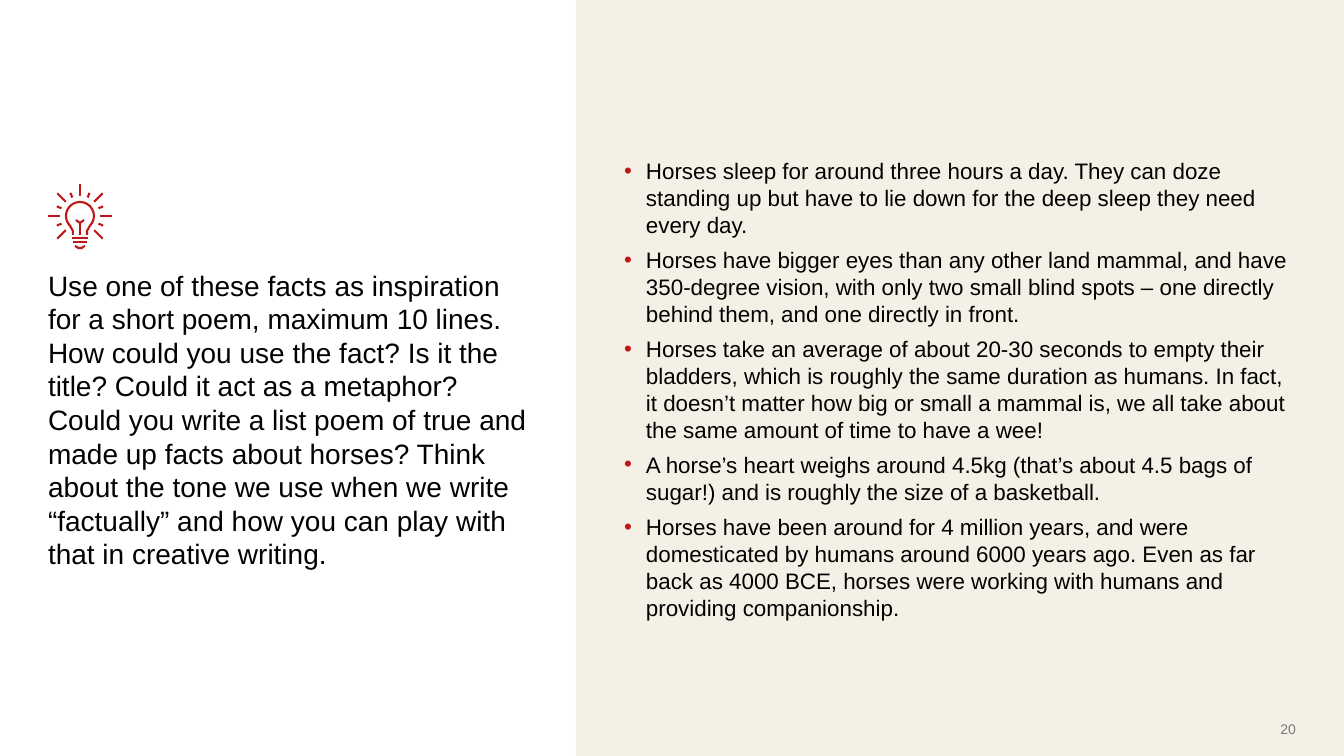
from math import cos, radians, sin

from lxml.etree import SubElement
from pptx import Presentation
from pptx.dml.color import RGBColor
from pptx.enum.shapes import MSO_CONNECTOR as Connector, MSO_SHAPE as Shape
from pptx.enum.text import MSO_ANCHOR as Anchor, MSO_AUTO_SIZE as AutoSize, PP_ALIGN as Align
from pptx.oxml.ns import qn
from pptx.util import Pt

PX = 12192000 / 1344
INK, RED, CREAM, GREY = "010302", "BF1716", "F4F0E5", "797979"

PROMPT = (
    "Use one of these facts as inspiration for a short poem, maximum 10 lines. "
    "How could you use the fact? Is it the title? Could it act as a metaphor? "
    "Could you write a list poem of true and made up facts about horses? "
    "Think about the tone we use when we write “factually” and how you can play "
    "with that in creative writing."
)
FACTS = [
    "Horses sleep for around three hours a day. They can doze standing up but have "
    "to lie down for the deep sleep they need every day.",
    "Horses have bigger eyes than any other land mammal, and have 350-degree vision, "
    "with only two small blind spots – one directly behind them, and one directly in front.",
    "Horses take an average of about 20-30 seconds to empty their bladders, which is "
    "roughly the same duration as humans. In fact, it doesn’t matter how big or small "
    "a mammal is, we all take about the same amount of time to have a wee!",
    "A horse’s heart weighs around 4.5kg (that’s about 4.5 bags of sugar!) and is "
    "roughly the size of a basketball.",
    "Horses have been around for 4 million years, and were domesticated by humans "
    "around 6000 years ago. Even as far back as 4000 BCE, horses were working with "
    "humans and providing companionship.",
]


def emu(px):
    return round(px * PX)


def rgb(value):
    return RGBColor.from_string(value)


def polar(centre, radius, degrees):
    angle = radians(degrees)
    return centre[0] + radius * cos(angle), centre[1] - radius * sin(angle)


class Page:
    """Holds the style and the current slide, and draws each kind of element."""

    def __init__(self, slide, font="Arial", stroke=1.5):
        self.slide, self.shapes = slide, slide.shapes
        self.font, self.stroke = font, Pt(stroke)

    def panel(self, x, y, width, height, fill):
        panel = self.shapes.add_shape(Shape.RECTANGLE, *map(emu, (x, y, width, height)))
        panel.shadow.inherit = False
        panel.fill.solid()
        panel.fill.fore_color.rgb = rgb(fill)
        panel.line.fill.background()
        self.shapes.element.insert(2, panel.element)

    def text(self, holder, box, lines, size, color=INK, align=Align.LEFT,
             anchor=Anchor.TOP, after=0, bullet=None):
        holder.left, holder.top, holder.width, holder.height = map(emu, box)
        frame = holder.text_frame
        frame.text = "\n".join(lines)
        frame.word_wrap, frame.auto_size = True, AutoSize.NONE
        frame.vertical_anchor = anchor
        frame.margin_left = frame.margin_right = frame.margin_top = frame.margin_bottom = 0
        for paragraph in frame.paragraphs:
            paragraph.alignment = align
            paragraph.space_before, paragraph.space_after = Pt(0), Pt(after)
            if bullet:
                self.bullet(paragraph, bullet)
            for run in paragraph.runs:
                run.font.name, run.font.size = self.font, Pt(size)
                run.font.color.rgb = rgb(color)

    def bullet(self, paragraph, color, indent=22):
        properties = paragraph._p.get_or_add_pPr()
        properties.set("marL", str(emu(indent)))
        properties.set("indent", str(-emu(indent)))
        SubElement(SubElement(properties, qn("a:buClr")), qn("a:srgbClr")).set("val", color)
        SubElement(properties, qn("a:buFont")).set("typeface", self.font)
        SubElement(properties, qn("a:buChar")).set("char", "•")

    def line(self, start, end, color=RED):
        line = self.shapes.add_connector(Connector.STRAIGHT, *map(emu, (*start, *end)))
        line.line.color.rgb, line.line.width = rgb(color), self.stroke
        SubElement(line.element.spPr, qn("a:effectLst"))

    def outline(self, points, color=RED):
        first, *rest = [(emu(x), emu(y)) for x, y in points]
        builder = self.shapes.build_freeform(*first)
        builder.add_line_segments(rest, close=False)
        outline = builder.convert_to_shape()
        outline.shadow.inherit = False
        outline.fill.background()
        outline.line.color.rgb, outline.line.width = rgb(color), self.stroke

    def light_bulb(self, centre):
        for step in range(13):
            angle = -45 + step * 22.5
            reach = 25 if step % 2 else 32
            self.line(polar(centre, 20, angle), polar(centre, reach, angle))

        def offset(*points):
            return [(centre[0] + x, centre[1] + y) for x, y in points]

        glass = [polar(centre, 14, angle) for angle in range(-45, 226, 15)]
        self.outline(offset((7, 19), (7, 15)) + glass + offset((-7, 15), (-7, 19)))
        self.outline(offset((-4, 4), (0, 7), (4, 4)))
        self.outline(offset((-5, 30), (-3, 31), (-2, 32), (2, 32), (3, 31), (5, 30)))
        for start, end in (((0, 7), (0, 19)), ((-8, 22), (8, 22)), ((-7, 26), (7, 26))):
            self.line(*offset(start, end))


def main():
    deck = Presentation()
    deck.slide_width, deck.slide_height = emu(1344), emu(756)
    page = Page(deck.slides.add_slide(deck.slide_layouts[1]))
    prompt, facts = page.slide.placeholders

    page.panel(576, 0, 768, 756, CREAM)
    page.text(prompt, (48, 268, 480, 305), [PROMPT], 20)
    page.light_bulb((80, 216))
    page.text(facts, (624, 157, 672, 414), FACTS, 16, after=6, bullet=RED)
    number = page.shapes.add_textbox(0, 0, 0, 0)
    page.text(number, (1210, 720, 86, 17), ["20"], 10, GREY, Align.RIGHT, Anchor.MIDDLE)

    deck.save("out.pptx")


if __name__ == "__main__":
    main()
